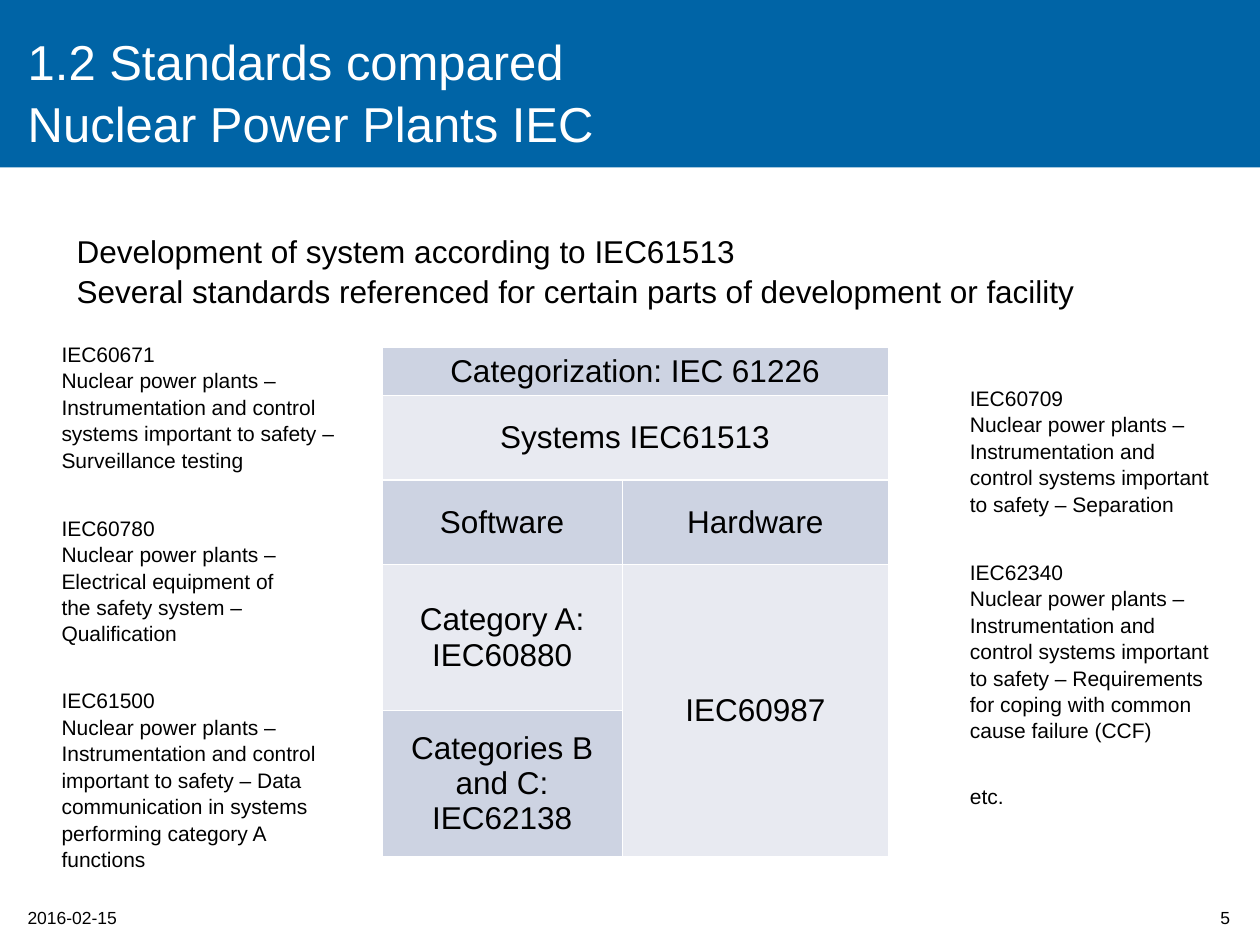
import pptx
import pptx.util
import pptx.dml.color
import pptx.enum.shapes
import pptx.enum.text
from pptx.util import Inches

ALIGN = pptx.enum.text.PP_ALIGN
ANCHOR = pptx.enum.text.MSO_ANCHOR
COLORS = {"band": "0064A6", "dark": "CDD3E2", "light": "E8EAF1",
          "text": "000000", "title": "FFFFFF"}

TITLE = "1.2 Standards compared\vNuclear Power Plants IEC"
INTRO = ["Development of system according to IEC61513",
         "Several standards referenced for certain parts of development or facility"]
LEFT_X, RIGHT_X = 0.39, 7.6
# left, top, width, height, paragraphs
STANDARDS = [
    (LEFT_X, 2.65, 2.4, 1.11, [
        "IEC60671",
        "Nuclear power plants – Instrumentation and control systems "
        "important to safety – Surveillance testing"]),
    (LEFT_X, 4.03, 2.14, 1.11, [
        "IEC60780",
        "Nuclear power plants – Electrical equipment of the safety system – Qualification"]),
    (LEFT_X, 5.4, 2.42, 1.51, [
        "IEC61500",
        "Nuclear power plants – Instrumentation and control important to safety – Data",
        "communication in systems performing category A functions"]),
    (RIGHT_X, 3, 2.2, 1.11, [
        "IEC60709",
        "Nuclear power plants – Instrumentation and control systems "
        "important to safety – Separation"]),
    (RIGHT_X, 4.38, 2.13, 1.51, [
        "IEC62340",
        "Nuclear power plants – Instrumentation and control systems important to "
        "safety – Requirements for coping with common cause failure (CCF)"]),
    (RIGHT_X, 6.16, 0.47, 0.3, ["etc."]),
]
COLUMNS = [1.91, 2.11]
ROWS = [0.37, 0.67, 0.67, 1.16, 1.16]
# row, column, row span, column span, fill, paragraphs
CELLS = [
    (0, 0, 1, 2, "dark", ["Categorization: IEC 61226"]),
    (1, 0, 1, 2, "light", ["Systems IEC61513"]),
    (2, 0, 1, 1, "dark", ["Software"]),
    (2, 1, 1, 1, "dark", ["Hardware"]),
    (3, 0, 1, 1, "light", ["Category A:", "IEC60880"]),
    (3, 1, 2, 1, "light", ["IEC60987"]),
    (4, 0, 1, 1, "dark", ["Categories B and C:", "IEC62138"]),
]


def rgb(name):
    return pptx.dml.color.RGBColor.from_string(COLORS[name])


def write(tf, paragraphs, size=12, color="text", align=ALIGN.LEFT, spacing=1.05):
    for i, text in enumerate(paragraphs):
        p = tf.paragraphs[0] if i == 0 else tf.add_paragraph()
        p.text = text
        p.alignment = align
        p.line_spacing = spacing
        for r in p.runs:
            r.font.name = "Arial"
            r.font.size = pptx.util.Pt(size)
            r.font.color.rgb = rgb(color)


def add_text(s, box, paragraphs, anchor=ANCHOR.TOP, wrap=True, **style):
    tf = s.shapes.add_textbox(*map(Inches, box)).text_frame
    tf.word_wrap = wrap
    tf.vertical_anchor = anchor
    write(tf, paragraphs, **style)


def add_title(s):
    title = s.shapes.title
    title.left, title.top, title.width, title.height = map(Inches, (0.12, 0.21, 7.56, 1.02))
    title.text_frame.vertical_anchor = ANCHOR.MIDDLE
    write(title.text_frame, [TITLE], size=28, color="title")
    band = s.shapes.add_shape(pptx.enum.shapes.MSO_SHAPE.RECTANGLE,
                              0, 0, Inches(10), Inches(1.33))
    band.shadow.inherit = False
    band.fill.solid()
    band.fill.fore_color.rgb = rgb("band")
    band.line.fill.background()
    title.element.addprevious(band.element)  # band goes behind the title


def add_standards_table(s):
    table = s.shapes.add_table(len(ROWS), len(COLUMNS), Inches(3.03), Inches(2.76),
                               Inches(sum(COLUMNS)), Inches(sum(ROWS))).table
    table.first_row = table.horz_banding = False
    for column, width in zip(table.columns, COLUMNS):
        column.width = Inches(width)
    for row, height in zip(table.rows, ROWS):
        row.height = Inches(height)
    for row, col, row_span, col_span, fill, paragraphs in CELLS:
        cell = table.cell(row, col)
        if row_span * col_span > 1:
            cell.merge(table.cell(row + row_span - 1, col + col_span - 1))
        cell.fill.solid()
        cell.fill.fore_color.rgb = rgb(fill)
        cell.vertical_anchor = ANCHOR.MIDDLE
        cell.margin_top = cell.margin_bottom = Inches(0.04)
        write(cell.text_frame, paragraphs, size=18, align=ALIGN.CENTER, spacing=1.0)


def main():
    prs = pptx.Presentation()
    prs.slide_width, prs.slide_height = Inches(10), Inches(7.5)
    s = prs.slides.add_slide(prs.slide_layouts[5])
    add_title(s)
    add_text(s, (0.12, 7.14, 1.65, 0.27), ["2016-02-15"], size=10)
    add_text(s, (9.14, 7.08, 0.72, 0.4), ["5"], size=10,
             anchor=ANCHOR.MIDDLE, align=ALIGN.RIGHT)
    add_standards_table(s)
    add_text(s, (0.51, 1.78, 8.43, 0.7), INTRO, size=18)
    for *box, paragraphs in STANDARDS:
        add_text(s, box, paragraphs, wrap=len(paragraphs) > 1)
    prs.save("out.pptx")


if __name__ == "__main__":
    main()
